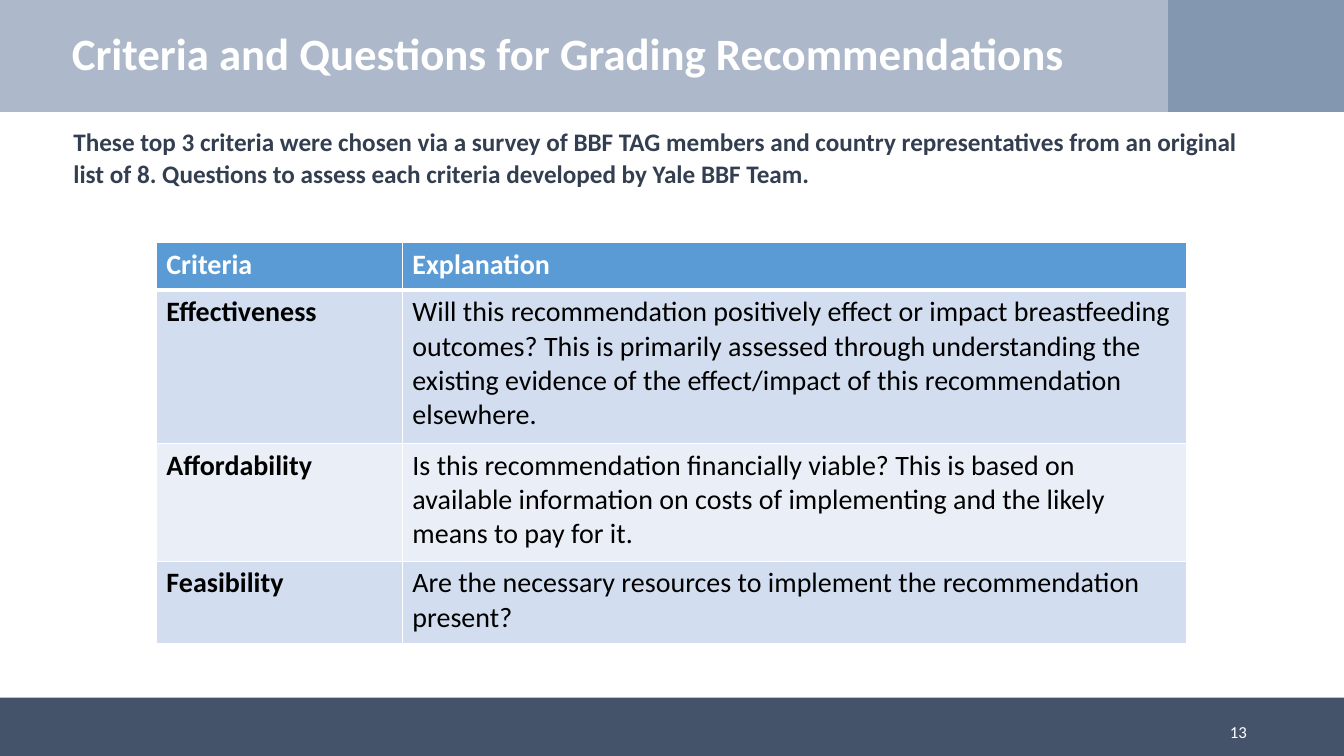
from lxml import etree
from pptx import Presentation, util as u
from pptx.dml.color import RGBColor
from pptx.enum import shapes, text
from pptx.oxml import ns

# Content
TITLE = "Criteria and Questions for Grading Recommendations"
INTRO = ("These top 3 criteria were chosen via a survey of BBF TAG members and country "
         "representatives from an original list of 8. Questions to assess each criteria "
         "developed by Yale BBF Team.")
PAGE = "13"
ROWS = [
    ("Criteria", "Explanation"),
    ("Effectiveness", "Will this recommendation positively effect or impact breastfeeding "
     "outcomes? This is primarily assessed through understanding the existing evidence of "
     "the effect/impact of this recommendation elsewhere."),
    ("Affordability", "Is this recommendation financially viable? This is based on available "
     "information on costs of implementing and the likely means to pay for it."),
    ("Feasibility", "Are the necessary resources to implement the recommendation present?"),
]


# Theme
class Theme:
    face = "Calibri"
    white, black, navy = "FFFFFF", "000000", "333F50"
    band, foot, block = "ADB9CA", "445369", "8497B0"
    head, odd, even = "5B9BD5", "D2DEEF", "EAEFF7"
    title, table, intro, page = 32, 20, 18, 12


# Layout in centimetres
WIDE, HIGH = 33.87, 19.05
BAND, FOOT, BLOCK = 2.82, 1.47, 4.43
BARS = [
    (0, 0, WIDE, BAND, Theme.band),
    (0, HIGH - FOOT, WIDE, FOOT, Theme.foot),
    (WIDE - BLOCK, 0, BLOCK, BAND, Theme.block),
]
TABLE = (3.94, 6.12)
COLS = (6.2, 19.76)
TALL = (1.19, 3.86, 2.97, 2.08)


def apply(obj, **values):
    for name, value in values.items():
        setattr(obj, name, value)


def style(para, size, color, bold=False, **form):
    apply(para, **form)
    apply(para.font, name=Theme.face, size=u.Pt(size), bold=bold)
    para.font.color.rgb = RGBColor.from_string(color)


def fill(obj, color):
    obj.fill.solid()
    obj.fill.fore_color.rgb = RGBColor.from_string(color)


def border(cell, top, low):
    props = cell._tc.get_or_add_tcPr()
    for side, width in (("L", 1), ("R", 1), ("T", top), ("B", low)):
        line = etree.SubElement(props, ns.qn("a:ln" + side), w=str(u.Pt(width)))
        paint = etree.SubElement(line, ns.qn("a:solidFill"))
        etree.SubElement(paint, ns.qn("a:srgbClr"), val=Theme.white)


def write(slide, words, box, anchor, *look, **form):
    frame = slide.shapes.add_textbox(*map(u.Cm, box)).text_frame
    apply(frame, word_wrap=True, vertical_anchor=anchor, text=words)
    style(frame.paragraphs[0], *look, **form)


def main():
    deck = Presentation()
    apply(deck, slide_width=u.Cm(WIDE), slide_height=u.Cm(HIGH))
    slide = deck.slides.add_slide(deck.slide_layouts[5])

    # Bars
    for *box, color in BARS:
        bar = slide.shapes.add_shape(shapes.MSO_SHAPE.RECTANGLE, *map(u.Cm, box))
        bar.shadow.inherit = False
        bar.line.fill.background()
        fill(bar, color)

    # Title, brought in front of the bars
    title = slide.shapes.title
    title.element.getparent().append(title.element)
    apply(title, left=u.Cm(-0.41), top=u.Cm(0.18), width=u.Cm(29.46), height=u.Cm(2.03))
    apply(title.text_frame, text=TITLE, word_wrap=True, auto_size=text.MSO_AUTO_SIZE.NONE,
          vertical_anchor=text.MSO_ANCHOR.MIDDLE)
    style(title.text_frame.paragraphs[0], Theme.title, Theme.white, True,
          alignment=text.PP_ALIGN.CENTER, line_spacing=u.Pt(46))

    # Introduction and page number
    write(slide, INTRO, (1.6, 3, 30.63, 1.9), text.MSO_ANCHOR.TOP,
          Theme.intro, Theme.navy, True, line_spacing=1.07, space_after=u.Pt(8))
    write(slide, PAGE, (29.03, 17.93, 2.64, 1.02), text.MSO_ANCHOR.MIDDLE,
          Theme.page, Theme.white, alignment=text.PP_ALIGN.RIGHT)

    # Criteria table
    size = (sum(COLS), sum(TALL))
    grid = slide.shapes.add_table(len(ROWS), len(COLS), *map(u.Cm, TABLE + size)).table
    for col, width in zip(grid.columns, COLS):
        col.width = u.Cm(width)
    for r, row in enumerate(ROWS):
        grid.rows[r].height = u.Cm(TALL[r])
        back = Theme.head if r == 0 else (Theme.even, Theme.odd)[r % 2]
        ink = Theme.black if r else Theme.white
        for c, words in enumerate(row):
            cell = grid.cell(r, c)
            cell.text = words
            border(cell, 3 if r == 1 else 1, 3 if r == 0 else 1)
            fill(cell, back)
            style(cell.text_frame.paragraphs[0], Theme.table, ink, r == 0 or c == 0)

    deck.save("out.pptx")


if __name__ == "__main__":
    main()
